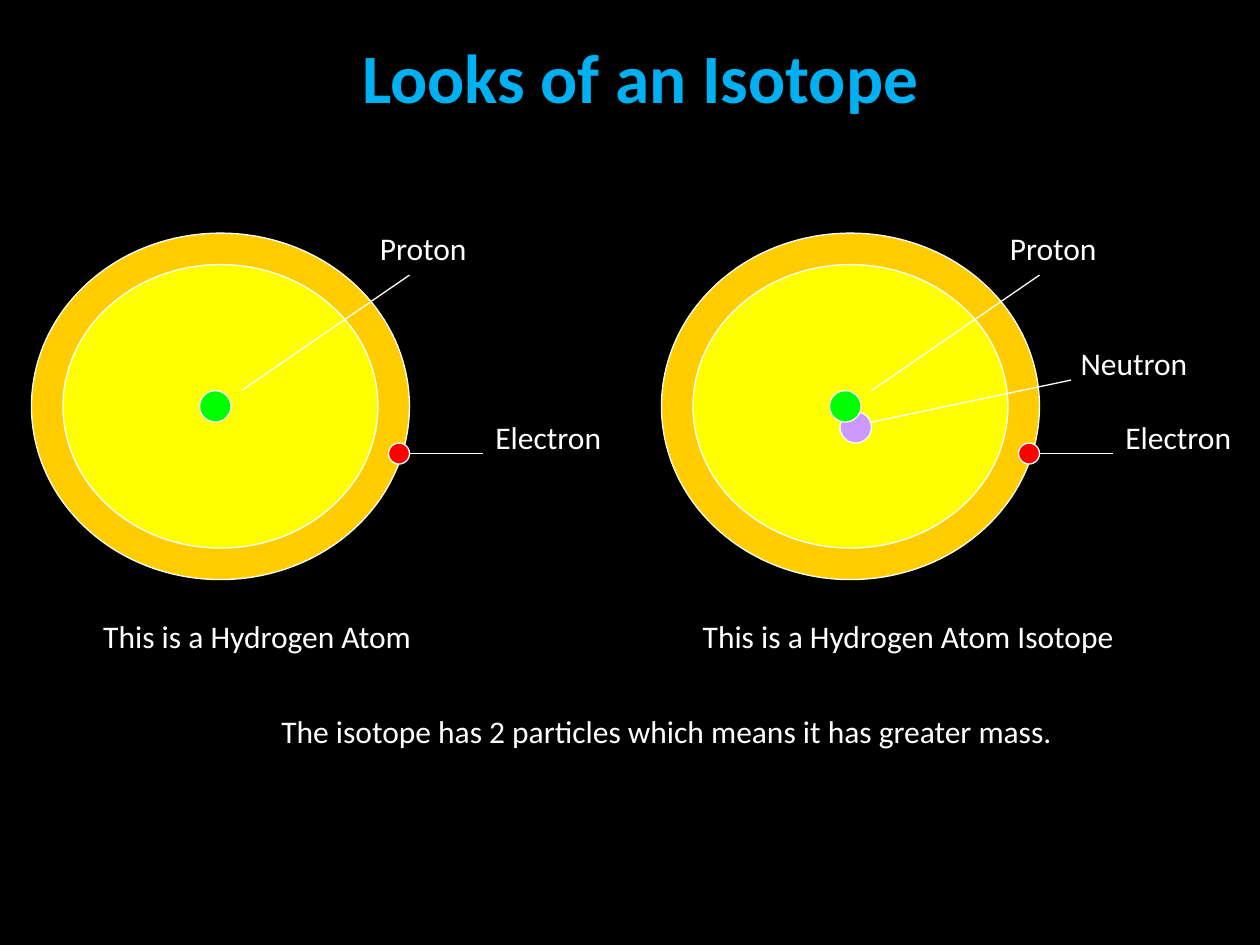
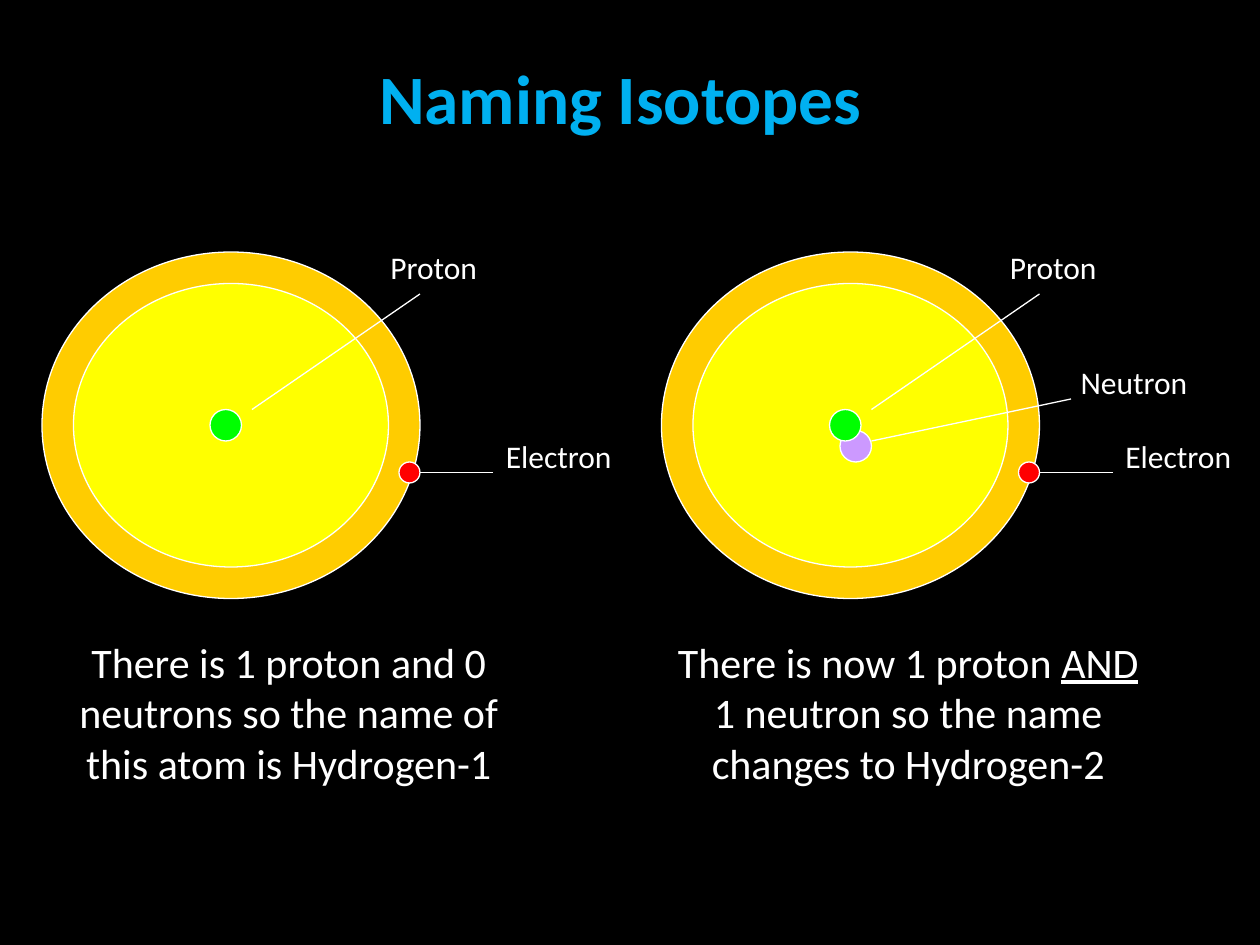
from lxml.etree import SubElement
from pptx import Presentation
from pptx.dml.color import RGBColor
from pptx.enum.shapes import MSO_CONNECTOR, MSO_SHAPE
from pptx.enum.text import MSO_ANCHOR, MSO_AUTO_SIZE, PP_ALIGN
from pptx.oxml.ns import qn
from pptx.util import Pt

FONT = "Calibri"
BLACK = "000000"
WHITE = "FFFFFF"
TITLE_BLUE = "00B0F0"
SHELL_ORANGE = "FFCC00"
INNER_YELLOW = "FFFF00"
PROTON_GREEN = "00FF00"
NEUTRON_LILAC = "CC99FF"
ELECTRON_RED = "FF0000"
LABEL_HEIGHT = 28.8
CAPTION_WIDTH = 294


def rgb(hex_color):
    return RGBColor.from_string(hex_color)


def add_run(paragraph, text, size, color=WHITE, bold=False, underline=False):
    run = paragraph.add_run()
    run.text = text
    run.font.name = FONT
    run.font.size = Pt(size)
    run.font.bold = bold
    run.font.underline = underline
    run.font.color.rgb = rgb(color)


def add_text(shapes, box, pieces, size=18, align=PP_ALIGN.CENTER):
    label = shapes.add_textbox(*map(Pt, box))
    frame = label.text_frame
    frame.word_wrap = True
    frame.auto_size = MSO_AUTO_SIZE.SHAPE_TO_FIT_TEXT
    paragraph = frame.paragraphs[0]
    paragraph.alignment = align
    for text, underline in pieces:
        add_run(paragraph, text, size, underline=underline)


def add_ellipse(shapes, box, color):
    ellipse = shapes.add_shape(MSO_SHAPE.OVAL, *map(Pt, box))
    ellipse.shadow.inherit = False
    ellipse.fill.solid()
    ellipse.fill.fore_color.rgb = rgb(color)
    ellipse.line.color.rgb = rgb(WHITE)
    ellipse.line.width = Pt(0.75)


def add_pointer(shapes, ends):
    pointer = shapes.add_connector(MSO_CONNECTOR.STRAIGHT, *map(Pt, ends))
    pointer.line.color.rgb = rgb(WHITE)
    pointer.line.width = Pt(0.75)
    SubElement(pointer._element.spPr, qn("a:effectLst"))


def add_atom(slide, left, top, has_neutron):
    atom = slide.shapes.add_group_shape().shapes

    def particle(x, y, width, height, color):
        add_ellipse(atom, (left + x, top + y, width, height), color)

    def pointer(x1, y1, x2, y2):
        add_pointer(atom, (left + x1, top + y1, left + x2, top + y2))

    def label(x, y, width, text, align=PP_ALIGN.LEFT):
        box = (left + x, top + y, width, LABEL_HEIGHT)
        add_text(atom, box, [(text, False)], align=align)

    particle(0, 0, 216, 198, SHELL_ORANGE)
    particle(18, 18, 180, 162, INNER_YELLOW)
    pointer(120, 90, 216, 24)
    label(192, -6, 114, "Proton")
    particle(204, 120, 12, 12, ELECTRON_RED)
    pointer(216, 126, 258, 126)
    label(258, 102, 108, "Electron")
    if has_neutron:
        particle(102, 102, 18, 18, NEUTRON_LILAC)
        pointer(120, 108, 234, 84)
        label(222, 60, 96, "Neutron", PP_ALIGN.CENTER)
    particle(96, 90, 18, 18, PROTON_GREEN)


def add_title(slide, box, text):
    title = slide.shapes.title
    title.left, title.top, title.width, title.height = map(Pt, box)
    frame = title.text_frame
    frame.vertical_anchor = MSO_ANCHOR.MIDDLE
    frame.auto_size = MSO_AUTO_SIZE.NONE
    paragraph = frame.paragraphs[0]
    paragraph.alignment = PP_ALIGN.CENTER
    add_run(paragraph, text, 39.6, TITLE_BLUE, bold=True)


def add_comparison(prs, title, title_box, atoms_top, hydrogen_left,
                   captions, caption_lefts, caption_top, caption_height, caption_size):
    slide = prs.slides.add_slide(prs.slide_layouts[5])
    add_title(slide, title_box, title)
    add_atom(slide, hydrogen_left, atoms_top, has_neutron=False)
    add_atom(slide, 378, atoms_top, has_neutron=True)
    for caption, left in zip(captions, caption_lefts):
        box = (left, caption_top, CAPTION_WIDTH, caption_height)
        add_text(slide.shapes, box, caption, caption_size)
    return slide


def main():
    prs = Presentation()
    prs.slide_width, prs.slide_height = Pt(720), Pt(540)
    background = prs.slide_master.background.fill
    background.solid()
    background.fore_color.rgb = rgb(BLACK)

    looks = add_comparison(
        prs, "Looks of an Isotope", (42, 18, 648, 50.4), 133.2, 18,
        [[("This is a Hydrogen Atom", False)],
         [("This is a Hydrogen Atom Isotope", False)]],
        (0, 372), 349.2, LABEL_HEIGHT, 18)
    add_text(looks.shapes, (42, 403.2, 678, LABEL_HEIGHT),
             [("The isotope has 2 particles which means it has greater mass.", False)])

    add_comparison(
        prs, "Naming Isotopes", (121, 30, 467, 50.4), 144, 24,
        [[("There is 1 proton and 0 neutrons so the name of this atom is Hydrogen-1", False)],
         [("There is now 1 proton ", False), ("AND", True),
          (" 1 neutron so the name changes to Hydrogen-2", False)]],
        (18, 372), 360, 94.3, 24)

    prs.save("out.pptx")


if __name__ == "__main__":
    main()
